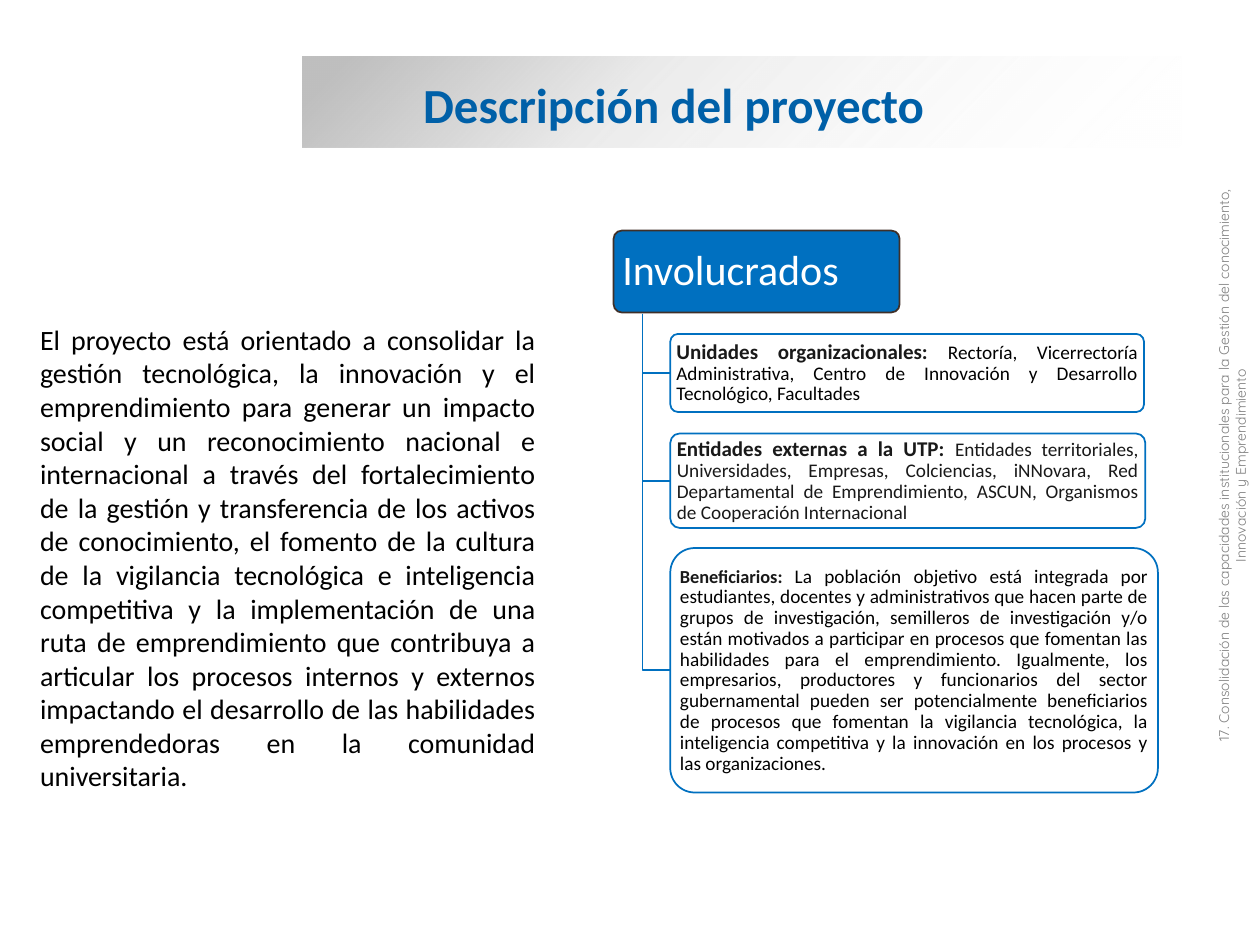
from lxml import etree
from pptx import Presentation
from pptx.dml.color import RGBColor
from pptx.enum.shapes import MSO_SHAPE as SHAPE
from pptx.enum.text import MSO_ANCHOR as ANCHOR, MSO_AUTO_SIZE as AUTO_SIZE, PP_ALIGN as ALIGN
from pptx.oxml import parse_xml
from pptx.oxml.ns import nsdecls, qn
from pptx.util import Inches, Pt

COLORS = {
    "title": "0060A8", "blue": "0070C0", "outline": "3F3029", "band": "BFBFBF",
    "white": "FFFFFF", "black": "000000", "dark": "191919", "gray": "808080",
}


def rgb(name):
    return RGBColor.from_string(COLORS[name])


def write(shape, runs, align=ALIGN.LEFT, inset=(0.1, 0.05), **frame_format):
    """Fill a shape with one paragraph of (text, size, colour, bold, font) runs."""
    frame = shape.text_frame
    side, end = inset
    frame_format = {
        "word_wrap": True, "vertical_anchor": ANCHOR.MIDDLE,
        "margin_left": Inches(side), "margin_right": Inches(side),
        "margin_top": Inches(end), "margin_bottom": Inches(end),
    } | frame_format
    for name, value in frame_format.items():
        setattr(frame, name, value)
    paragraph = frame.paragraphs[0]
    paragraph.alignment = align
    for text, size, color, bold, font in runs:
        run = paragraph.add_run()
        run.text = text
        for name, value in {"size": Pt(size), "bold": bold, "name": font}.items():
            setattr(run.font, name, value)
        run.font.color.rgb = rgb(color)
    return paragraph


prs = Presentation()
prs.slide_width, prs.slide_height = Inches(10), Inches(7.5)
slide = prs.slides.add_slide(prs.slide_layouts[6])
shapes = slide.shapes

# Title over a fading band
band = shapes.add_shape(SHAPE.RECTANGLE, Inches(2.4), Inches(0.45), Inches(6.98), Inches(0.72))
band.shadow.inherit = False
band.line.fill.background()
stops = "".join(
    f'<a:gs pos="{position * 1000}"><a:srgbClr val="{COLORS[color]}">'
    f'<a:alpha val="{alpha * 1000}"/></a:srgbClr></a:gs>'
    for position, color, alpha in [(5, "band", 100), (37, "band", 31), (100, "white", 0)]
)
band_geometry = band._element.spPr.find(qn("a:prstGeom"))
band_geometry.addnext(parse_xml(
    f'<a:gradFill {nsdecls("a")} rotWithShape="1"><a:gsLst>{stops}</a:gsLst>'
    '<a:lin ang="2700000" scaled="0"/></a:gradFill>'
))
title = shapes.add_textbox(Inches(3.26), Inches(0.54), Inches(6.2), Inches(0.57))
write(title, [("Descripción del proyecto", 28, "title", True, "Calibri")],
      auto_size=AUTO_SIZE.SHAPE_TO_FIT_TEXT)

# Stakeholder hierarchy: heading, then elbow and box for each group
heading = shapes.add_shape(SHAPE.ROUNDED_RECTANGLE, Inches(4.87), Inches(1.83),
                           Inches(2.27), Inches(0.65))
heading.shadow.inherit = False
heading.adjustments[0] = 0.1
heading.fill.solid()
heading.fill.fore_color.rgb = rgb("blue")
heading.line.color.rgb = rgb("outline")
heading.line.width = Pt(1)
write(heading, [("Involucrados", 24, "white", False, "Calibri")],
      inset=(0.05, 0.03)).line_spacing = 0.9

TRUNK, TRUNK_TOP, BOX_LEFT = 5.1, 2.49, 5.32
groups = [
    (2.65, 3.76, 0.62, 0.03, 12, "Unidades organizacionales: ", "black",
     "Rectoría, Vicerrectoría Administrativa, Centro de Innovación y Desarrollo Tecnológico, "
     "Facultades"),
    (3.44, 3.77, 0.75, 0.03, 12, "Entidades externas a la UTP: ", "dark",
     "Entidades territoriales, Universidades, Empresas, Colciencias, iNNovara, Red Departamental "
     "de Emprendimiento, ASCUN, Organismos de Cooperación Internacional"),
    (4.35, 3.87, 1.94, 0.02, 10.5, "Beneficiarios: ", "black",
     "La población objetivo está integrada por estudiantes, docentes y administrativos que hacen "
     "parte de grupos de investigación, semilleros de investigación y/o están motivados a "
     "participar en procesos que fomentan las habilidades para el emprendimiento. Igualmente, los "
     "empresarios, productores y funcionarios del sector gubernamental pueden ser potencialmente "
     "beneficiarios de procesos que fomentan la vigilancia tecnológica, la inteligencia "
     "competitiva y la innovación en los procesos y las organizaciones."),
]
for top, width, height, side, label_size, label, color, members in groups:
    middle = top + height / 2
    builder = shapes.build_freeform(Inches(TRUNK), Inches(TRUNK_TOP))
    builder.add_line_segments(
        [(Inches(TRUNK), Inches(middle)), (Inches(BOX_LEFT), Inches(middle))], close=False)
    elbow = builder.convert_to_shape()
    elbow.fill.background()

    box = shapes.add_shape(SHAPE.ROUNDED_RECTANGLE, Inches(BOX_LEFT), Inches(top),
                           Inches(width), Inches(height))
    box.adjustments[0] = 0.1
    box.fill.solid()
    box.fill.fore_color.rgb = rgb("white")
    white = box._element.spPr.find(qn("a:solidFill")).find(qn("a:srgbClr"))
    etree.SubElement(white, qn("a:alpha"), val="90000")
    for part in (elbow, box):
        part.shadow.inherit = False
        part.line.color.rgb = rgb("blue")
        part.line.width = Pt(1)
    write(box, [(label, label_size, "dark", True, "Calibri"),
                (members, 11, color, False, "Calibri")],
          ALIGN.JUSTIFY, (side, 0.02)).line_spacing = 0.9

# Project summary
summary = shapes.add_textbox(Inches(0.22), Inches(2.51), Inches(4.13), Inches(3.87))
write(summary, [(
    "El proyecto está orientado a consolidar la gestión tecnológica, la innovación y el "
    "emprendimiento para generar un impacto social y un reconocimiento nacional e internacional a "
    "través del fortalecimiento de la gestión y transferencia de los activos de conocimiento, el "
    "fomento de la cultura de la vigilancia tecnológica e inteligencia competitiva y la "
    "implementación de una ruta de emprendimiento que contribuya a articular los procesos internos "
    "y externos impactando el desarrollo de las habilidades emprendedoras en la comunidad "
    "universitaria.", 16, "black", False, "Calibri")],
    ALIGN.JUSTIFY, vertical_anchor=ANCHOR.TOP, auto_size=AUTO_SIZE.SHAPE_TO_FIT_TEXT)

# Project name along the right edge
project_name = shapes.add_textbox(Inches(7.26), Inches(3.51), Inches(5.04), Inches(0.37))
project_name.rotation = 270
write(project_name, [(
    "17. Consolidación de las capacidades institucionales para la Gestión del conocimiento, "
    "Innovación y Emprendimiento", 8, "gray", False, "Quicksand")],
    ALIGN.CENTER, vertical_anchor=ANCHOR.TOP, auto_size=AUTO_SIZE.SHAPE_TO_FIT_TEXT)

prs.save("out.pptx")
